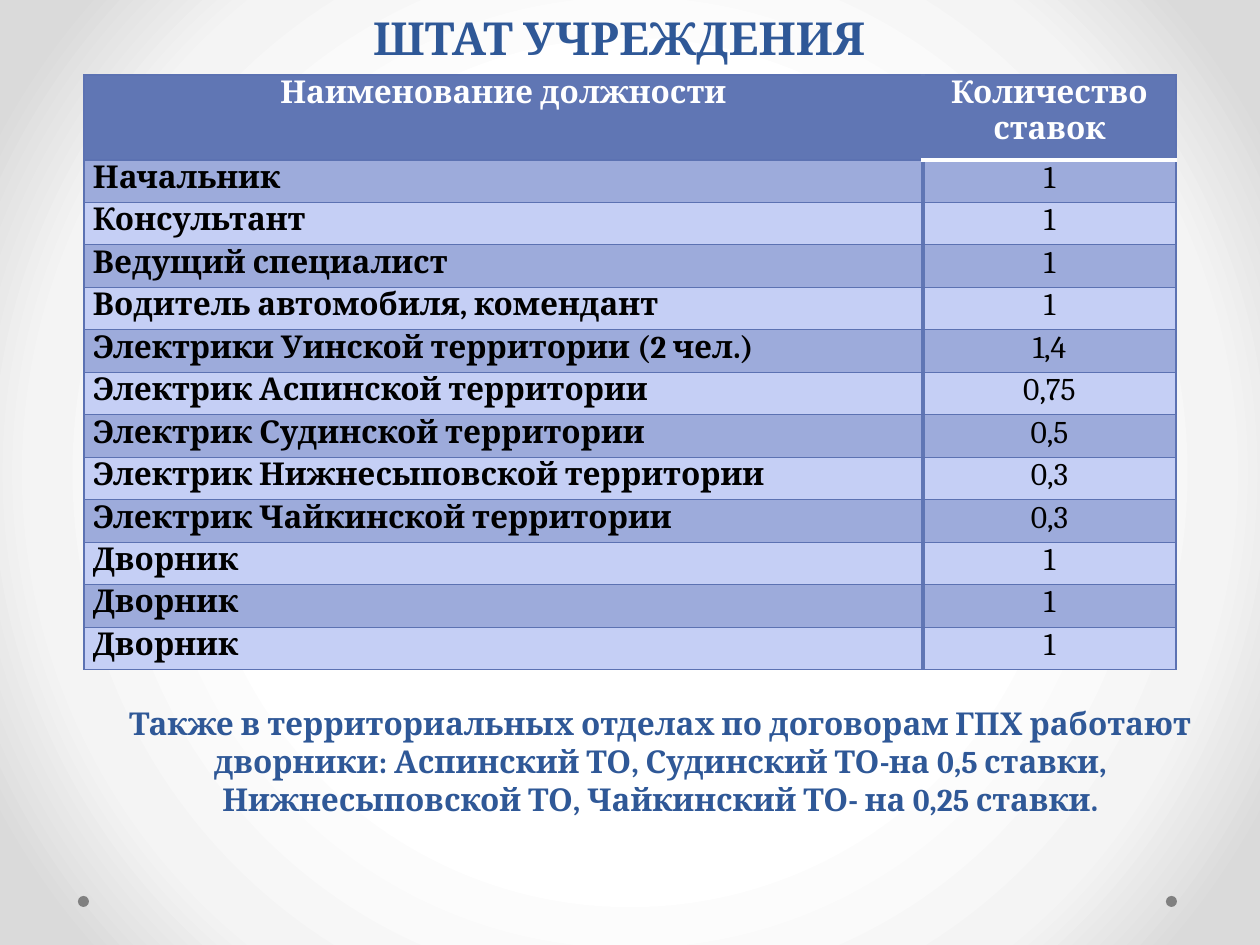
from lxml import etree
from pptx import Presentation
from pptx import util as u
from pptx.dml.color import RGBColor
from pptx.enum import shapes, text
from pptx.oxml import parse_xml
from pptx.oxml.ns import nsdecls, qn

PX_PER_INCH = 126
BLUE, GRID, TITLE = "6076B4", "5C72B2", "2F5897"
BANDS = ("9DABDB", "C5CFF5")
STAFF = [
    ("Начальник", "1"),
    ("Консультант", "1"),
    ("Ведущий специалист", "1"),
    ("Водитель автомобиля, комендант", "1"),
    ("Электрики Уинской территории (2 чел.)", "1,4"),
    ("Электрик Аспинской территории", "0,75"),
    ("Электрик Судинской территории", "0,5"),
    ("Электрик Нижнесыповской территории", "0,3"),
    ("Электрик Чайкинской территории", "0,3"),
    ("Дворник", "1"),
    ("Дворник", "1"),
    ("Дворник", "1"),
]


def emu(px):
    return u.Emu(round(px * 914400 / PX_PER_INCH))


def color(value):
    return RGBColor.from_string(value)


class SlideBuilder:
    font = "Cambria"

    def __init__(self, slide):
        self.slide = slide

    def background(self, stops):
        stop_xml = "".join(
            f'<a:gs pos="{position * 1000}"><a:srgbClr val="{value}"/></a:gs>'
            for position, value in stops)
        background = parse_xml(
            f'<p:bg {nsdecls("p", "a")}><p:bgPr><a:gradFill rotWithShape="1">'
            f'<a:gsLst>{stop_xml}</a:gsLst><a:path path="circle">'
            '<a:fillToRect l="50000" t="50000" r="50000" b="50000"/></a:path>'
            '</a:gradFill><a:effectLst/></p:bgPr></p:bg>')
        self.slide.element.cSld.insert(0, background)

    def set_text(self, text_frame, words, size, value, bold=True, centered=True):
        text_frame.text = words
        paragraph = text_frame.paragraphs[0]
        paragraph.alignment = text.PP_ALIGN.CENTER if centered else text.PP_ALIGN.LEFT
        font = paragraph.runs[0].font
        font.name, font.size, font.bold = self.font, u.Pt(size), bold
        font.color.rgb = color(value)

    def text_box(self, left, top, width, height, words, size):
        box = self.slide.shapes.add_textbox(*map(emu, (left, top, width, height)))
        box.text_frame.word_wrap = True
        self.set_text(box.text_frame, words, size, TITLE)

    def dot(self, left, top, size):
        shape = self.slide.shapes.add_shape(
            shapes.MSO_SHAPE.OVAL, *map(emu, (left, top, size, size)))
        shape.shadow.inherit = False
        shape.fill.solid()
        shape.fill.fore_color.rgb = color("808080")
        shape.line.fill.background()

    def borders(self, cell, **special):
        properties = cell._tc.get_or_add_tcPr()
        for side in "LRTB":
            value, width = special.get(side, (GRID, 0.75))
            line = etree.SubElement(properties, qn(f"a:ln{side}"), w=str(u.Pt(width)))
            fill = etree.SubElement(line, qn("a:solidFill"))
            etree.SubElement(fill, qn("a:srgbClr"), val=value)

    def cell(self, cell, words, fill, value, bold, centered, special):
        cell.margin_left = cell.margin_right = emu(9)
        cell.margin_top = cell.margin_bottom = 0
        self.set_text(cell.text_frame, words, 18, value, bold, centered)
        self.borders(cell, **special)
        cell.fill.solid()
        cell.fill.fore_color.rgb = color(fill)

    def table(self, left, top, widths, height, header, rows):
        table = self.slide.shapes.add_table(
            len(rows) + 1, len(widths),
            *map(emu, (left, top, sum(widths), height))).table
        table.horz_banding = False
        for column, width in zip(table.columns, widths):
            column.width = emu(width)

        # The header is twice as tall as a body row
        unit = emu(height) // (len(rows) + 2)
        for index, row in enumerate(table.rows):
            row.height = unit if index else 2 * unit

        divider, rule = (BLUE, 2.25), ("FFFFFF", 2.25)
        for r, values in enumerate([header, *rows]):
            for c, words in enumerate(values):
                special = {"L" if c else "R": divider}
                if c and r < 2:
                    special["T" if r else "B"] = rule
                fill = BANDS[(r - 1) % 2] if r else BLUE
                self.cell(table.cell(r, c), words, fill,
                          "000000" if r else "FFFFFF",
                          bold=r == 0 or c == 0, centered=r == 0 or c == 1,
                          special=special)


def main():
    presentation = Presentation()
    presentation.slide_width, presentation.slide_height = emu(1260), emu(945)
    builder = SlideBuilder(presentation.slides.add_slide(presentation.slide_layouts[6]))

    # Background and corner dots
    builder.background([(50, "FFFFFF"), (76, "F4F4F4"), (92, "DADADA")])
    for left in (1166, 78):
        builder.dot(left, 896, 11)

    # Staff table
    builder.table(84, 75, (839, 253), 595,
                  ("Наименование должности", "Количество ставок"), STAFF)

    # Title and closing note
    builder.text_box(353, 4, 533, 66, "ШТАТ УЧРЕЖДЕНИЯ", 26)
    builder.text_box(
        105, 698, 1111, 130,
        "Также в территориальных отделах по договорам ГПХ работают дворники: "
        "Аспинский ТО, Судинский ТО-на 0,5 ставки, Нижнесыповской ТО, "
        "Чайкинский ТО- на 0,25 ставки.", 18)

    presentation.save("out.pptx")


if __name__ == "__main__":
    main()
